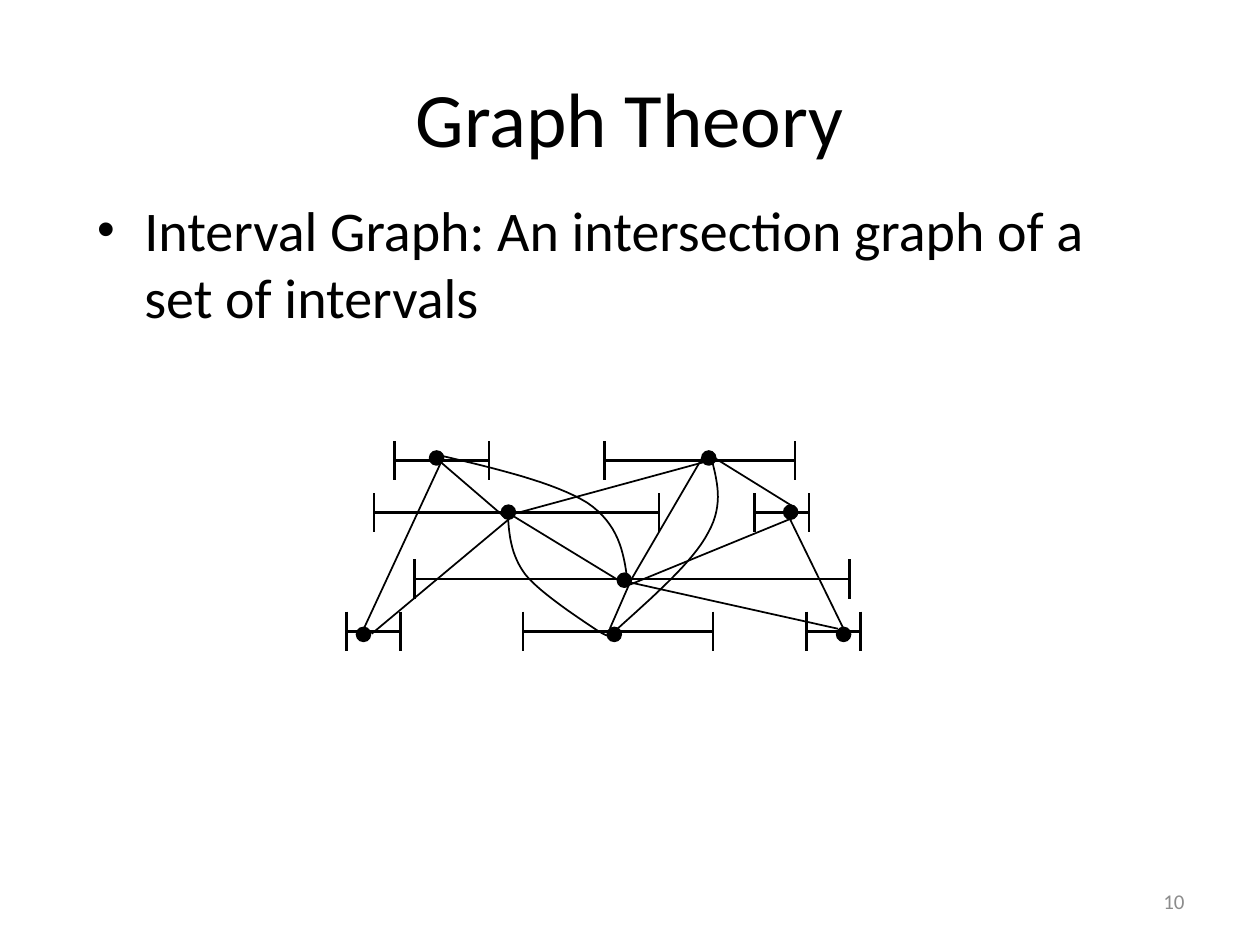
from dataclasses import dataclass

from lxml.etree import SubElement
from pptx import Presentation
from pptx.dml.color import RGBColor
from pptx.enum.shapes import MSO_CONNECTOR, MSO_SHAPE
from pptx.enum.text import MSO_ANCHOR, PP_ALIGN
from pptx.oxml.ns import qn
from pptx.util import Inches, Pt


@dataclass(frozen=True)
class Theme:
    """Fonts, colours, type sizes and line widths of the slide."""
    font: str = "Calibri"
    ink: RGBColor = RGBColor(0, 0, 0)
    muted: RGBColor = RGBColor(0x8C, 0x8C, 0x8C)
    title: Pt = Pt(44)
    body: Pt = Pt(32)
    small: Pt = Pt(12)
    interval: Pt = Pt(1.5)
    edge: Pt = Pt(1)


THEME = Theme()
CAP = 0.31
DOT = 0.11
CURVE_STEPS = 16

INTERVALS = [
    (2.97, 5.23, 4.07), (3.29, 6.74, 4.595), (3.13, 3.88, 3.655),
    (4.8, 6.31, 3.655), (6.4, 6.83, 5.01), (2.75, 3.18, 5.01),
    (4.15, 5.66, 5.01), (5.99, 6.42, 4.07),
]
VERTICES = [
    (3.41, 3.58), (5.57, 3.58), (3.98, 4.01), (4.9, 4.55),
    (2.83, 4.98), (6.22, 4.01), (4.82, 4.98), (6.64, 4.98),
]
EDGES = [
    ((5.58, 3.67), (4, 4.1)), ((6.27, 4.12), (5, 4.64)),
    ((5.68, 3.64), (6.31, 4.03)), ((3.5, 3.67), (4, 4.1)),
    ((5.01, 4.6), (4.84, 4.99)), ((6.65, 4.99), (4.9, 4.6)),
    ((4.08, 4.1), (4.9, 4.6)), ((2.85, 5.07), (3.5, 3.67)),
    ((2.95, 5.03), (4.04, 4.12)), ((6.27, 4.12), (6.69, 4.98)),
    ((5.57, 3.64), (5.01, 4.6)),
]
CURVED_EDGES = [
    [(4.87, 5.01), (4.87, 5.05), (4.87, 5.08), (4.75, 5.01), (4.63, 4.93),
     (4.29, 4.71), (4.17, 4.56), (4.05, 4.4), (4.04, 4.23), (4.03, 4.07)],
    [(4.88, 5.01), (5.19, 4.73), (5.5, 4.46), (5.62, 4.23),
     (5.75, 4), (5.69, 3.81), (5.64, 3.61)],
    [(3.47, 3.61), (3.94, 3.72), (4.4, 3.83), (4.66, 3.99),
     (4.91, 4.16), (4.95, 4.38), (4.98, 4.61)],
]


def set_text(sp, text, box, size, color, align, anchor):
    """Place a text shape and format its single paragraph."""
    for name, value in zip(("left", "top", "width", "height"), box):
        setattr(sp, name, Inches(value))
    tf = sp.text_frame
    tf.word_wrap = True
    tf.vertical_anchor = anchor
    p = tf.paragraphs[0]
    p.alignment = align
    r = p.add_run()
    r.text = text
    for name, value in {"name": THEME.font, "size": size}.items():
        setattr(r.font, name, value)
    r.font.color.rgb = color
    return p


def add_bullet(p):
    """Give a paragraph a slightly reduced round bullet."""
    pPr = p._p.get_or_add_pPr()
    SubElement(pPr, qn("a:buSzPct"), val="90000")
    SubElement(pPr, qn("a:buChar"), char="•")


def set_line(sp, width):
    """Draw an outline in ink at the given width."""
    sp.line.color.rgb = THEME.ink
    sp.line.width = width


def add_line(shapes, start, end, width):
    """Add a straight line between two points."""
    points = [Inches(v) for v in (*start, *end)]
    cxn = shapes.add_connector(MSO_CONNECTOR.STRAIGHT, *points)
    set_line(cxn, width)
    SubElement(cxn._element.spPr, qn("a:effectLst"))


def add_interval(shapes, left, right, y):
    """Add a horizontal interval with a cap at each end."""
    for x in (left, right):
        add_line(shapes, (x, y - CAP / 2), (x, y + CAP / 2), THEME.interval)
    add_line(shapes, (left, y), (right, y), THEME.interval)


def add_vertex(shapes, left, top):
    """Add a filled graph vertex."""
    sp = shapes.add_shape(MSO_SHAPE.OVAL, Inches(left), Inches(top), Inches(DOT), Inches(DOT))
    sp.shadow.inherit = False
    sp.fill.solid()
    sp.fill.fore_color.rgb = THEME.ink
    set_line(sp, THEME.edge)


def bezier_point(controls, t):
    """Return the point at t on a cubic curve, in EMU."""
    weights = ((1 - t) ** 3, 3 * t * (1 - t) ** 2, 3 * t * t * (1 - t), t ** 3)
    return tuple(Inches(sum(w * v for w, v in zip(weights, axis))) for axis in zip(*controls))


def add_curve(shapes, controls):
    """Add an open curve through a chain of cubic segments."""
    points = [
        bezier_point(controls[i:i + 4], step / CURVE_STEPS)
        for i in range(0, len(controls) - 1, 3)
        for step in range(1, CURVE_STEPS + 1)
    ]
    builder = shapes.build_freeform(*(Inches(v) for v in controls[0]))
    builder.add_line_segments(points, close=False)
    sp = builder.convert_to_shape()
    sp.shadow.inherit = False
    sp.fill.background()
    set_line(sp, THEME.edge)


def add_intervals(s):
    """Add the group of intervals."""
    shapes = s.shapes.add_group_shape().shapes
    for interval in INTERVALS:
        add_interval(shapes, *interval)


def add_graph(s):
    """Add the intersection graph over the intervals."""
    shapes = s.shapes.add_group_shape().shapes
    for vertex in VERTICES:
        add_vertex(shapes, *vertex)
    for start, end in EDGES:
        add_line(shapes, start, end, THEME.edge)
    for controls in CURVED_EDGES:
        add_curve(shapes, controls)


def main():
    """Build and save the slide."""
    prs = Presentation()
    prs.slide_width, prs.slide_height = Inches(10), Inches(7.5)
    s = prs.slides.add_slide(prs.slide_layouts[1])
    set_text(s.shapes.title, "Graph Theory", (0.5, 0.3, 9, 1.25),
             THEME.title, THEME.ink, PP_ALIGN.CENTER, MSO_ANCHOR.MIDDLE)
    p = set_text(s.placeholders[1], "Interval Graph: An intersection graph of a set of intervals",
                 (0.67, 1.5, 8.58, 5.17), THEME.body, THEME.ink, PP_ALIGN.LEFT, MSO_ANCHOR.TOP)
    add_bullet(p)
    set_text(s.shapes.add_textbox(0, 0, 0, 0), "10", (7.17, 6.95, 2.33, 0.4),
             THEME.small, THEME.muted, PP_ALIGN.RIGHT, MSO_ANCHOR.MIDDLE)
    add_intervals(s)
    add_graph(s)
    prs.save("out.pptx")


if __name__ == "__main__":
    main()
